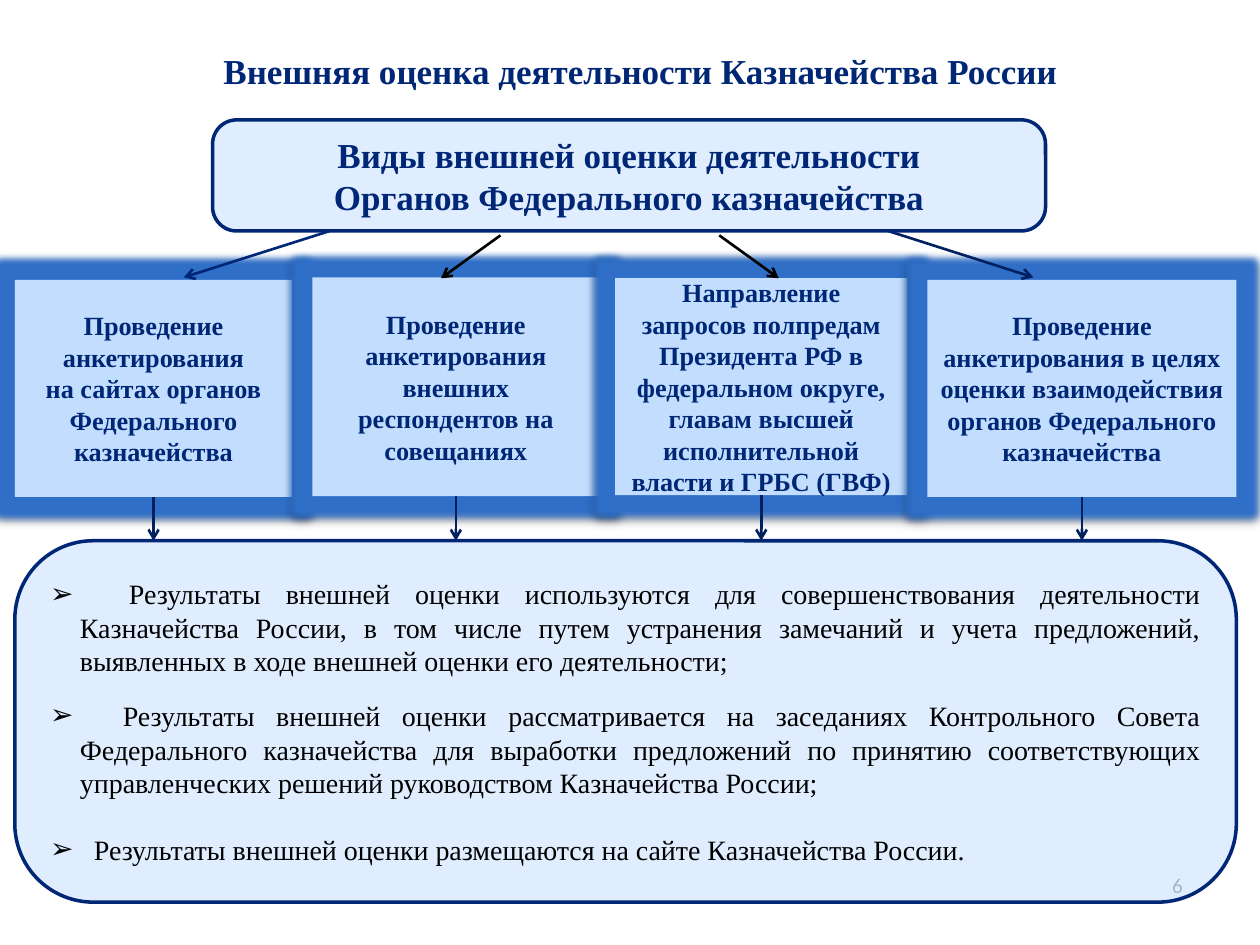
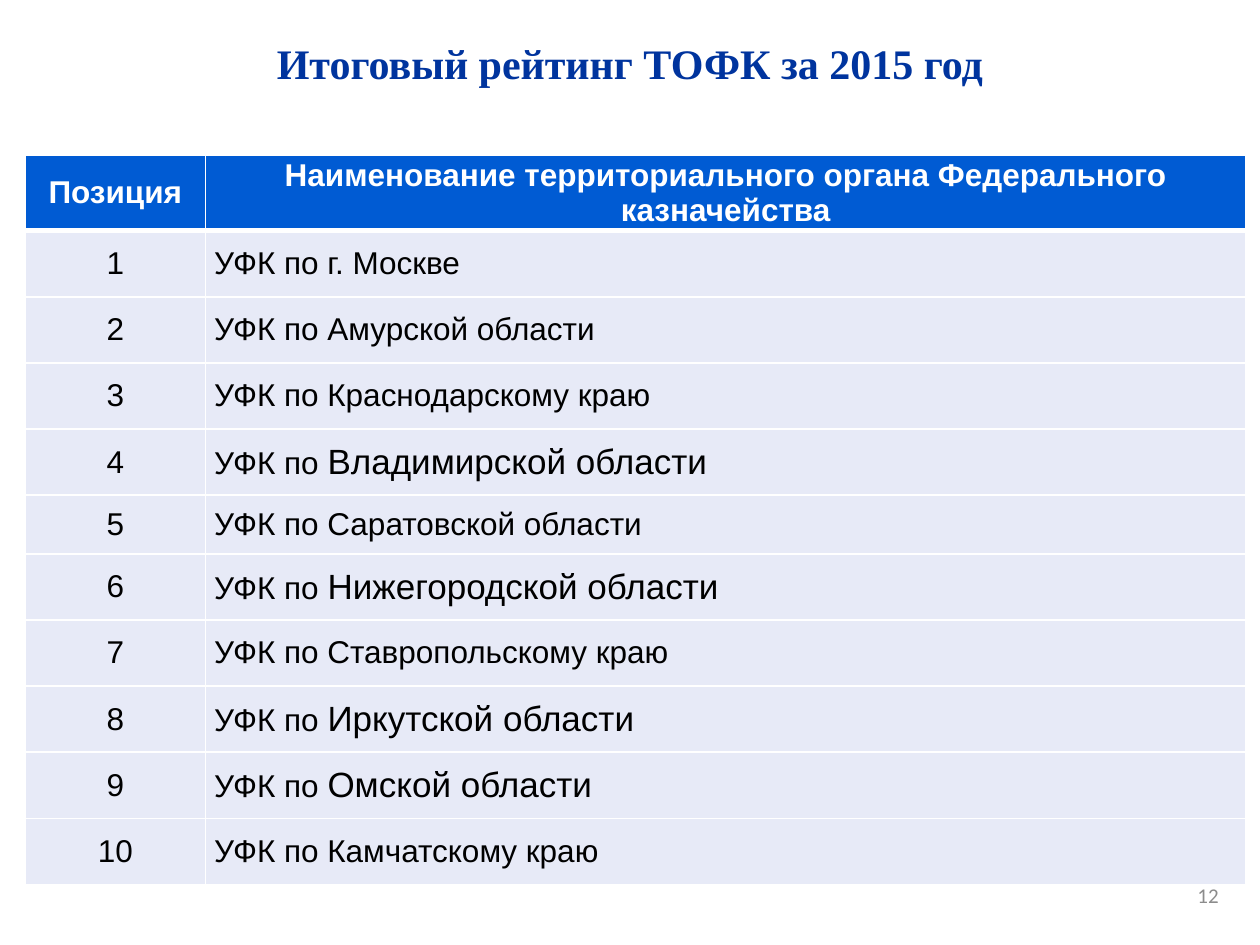
from lxml import etree
from pptx import Presentation
from pptx.dml.color import RGBColor
from pptx.enum.shapes import MSO_CONNECTOR, MSO_SHAPE
from pptx.enum.text import MSO_ANCHOR, PP_ALIGN
from pptx.oxml.ns import qn
from pptx.util import Pt

RECT, ROUNDED = MSO_SHAPE.RECTANGLE, MSO_SHAPE.ROUNDED_RECTANGLE
STRAIGHT = MSO_CONNECTOR.STRAIGHT
MIDDLE, TOP = MSO_ANCHOR.MIDDLE, MSO_ANCHOR.TOP
LEFT, CENTER = PP_ALIGN.LEFT, PP_ALIGN.CENTER
RIGHT, JUSTIFY = PP_ALIGN.RIGHT, PP_ALIGN.JUSTIFY
BOTTOM_SIDE = 2

SERIF, SANS, NUMBER_FONT = "Times New Roman", "Arial", "Calibri"
NAVY, DARK_NAVY, TITLE_BLUE = "002776", "002060", "00349E"
PALE_BLUE, GLOW_BLUE = "C3DDFF", "2F6FC8"
HEADER_BLUE, ROW_FILL = "005BD3", "E7EAF7"
BLACK, WHITE, GREY = "000000", "FFFFFF", "8C8C8C"

# left, top, width, height, lines of text
CARDS = [
    (8.5, 160, 158.5, 124,
     ["Проведение анкетирования",
      "на сайтах органов Федерального казначейства"]),
    (178.5, 158.5, 164, 125,
     ["Проведение анкетирования внешних респондентов на совещаниях"]),
    (351.5, 159, 167, 124,
     ["Направление запросов полпредам Президента РФ в федеральном округе,",
      "главам высшей исполнительной власти и ГРБС (ГВФ)"]),
    (530, 160, 176.5, 124,
     ["Проведение анкетирования в целях оценки взаимодействия органов "
      "Федерального казначейства"]),
]
# start x, start y, end x, end y, colour
BRANCHES = [
    (188.5, 132, 105, 158.5, NAVY),
    (286, 134.5, 252, 159, BLACK),
    (411, 134.5, 445, 159, BLACK),
    (507.5, 132, 590.5, 158.5, DARK_NAVY),
]
# space before, offset of the first word, text
RESULTS = [
    (0, 28, "Результаты внешней оценки используются для совершенствования "
     "деятельности Казначейства России, в том числе путем устранения замечаний "
     "и учета предложений, выявленных в ходе внешней оценки его деятельности;"),
    (12, 24.5, "Результаты внешней оценки рассматривается на заседаниях "
     "Контрольного Совета Федерального казначейства для выработки предложений "
     "по принятию соответствующих управленческих решений руководством "
     "Казначейства России;"),
    (19, 8, "Результаты внешней оценки размещаются на сайте Казначейства России."),
]
BULLET_INDENT = 17
PANEL_BOX = (8.5, 309, 698, 206.5)

REGIONS = ["г. Москве", "Амурской области", "Краснодарскому краю",
           "Владимирской области", "Саратовской области",
           "Нижегородской области", "Ставропольскому краю",
           "Иркутской области", "Омской области", "Камчатскому краю"]
LARGE_POSITIONS = {4, 6, 8, 9}
SHORT_POSITION = 5


def rgb(value):
    return RGBColor.from_string(value)


def points(*values):
    return [Pt(value) for value in values]


def add_colour(parent, value, alpha=None):
    colour = etree.SubElement(parent, qn("a:srgbClr"), val=value)
    if alpha is not None:
        etree.SubElement(colour, qn("a:alpha"), val=str(alpha * 1000))


def add_run(paragraph, text, size, colour, font=SERIF, bold=False):
    run = paragraph.add_run()
    run.text = text
    run.font.size, run.font.name, run.font.bold = Pt(size), font, bold
    run.font.color.rgb = rgb(colour)


def add_label(slide, box, text, size, colour, font=SERIF, bold=False,
              align=CENTER, anchor=TOP):
    frame = slide.shapes.add_textbox(*points(*box)).text_frame
    frame.word_wrap = True
    frame.vertical_anchor = anchor
    frame.paragraphs[0].alignment = align
    add_run(frame.paragraphs[0], text, size, colour, font, bold)


def add_title(slide, box, text, size, colour):
    add_label(slide, box, text, size, colour, bold=True)


def add_page_number(slide, left, top, number):
    add_label(slide, (left, top, 168, 29), number, 12, GREY, NUMBER_FONT,
              align=RIGHT, anchor=MIDDLE)


def add_block(slide, kind, box):
    block = slide.shapes.add_shape(kind, *points(*box))
    block.shadow.inherit = False
    block.fill.solid()
    block.fill.fore_color.rgb = rgb(PALE_BLUE)
    block.text_frame.word_wrap = True
    block.text_frame.vertical_anchor = MIDDLE
    return block


def add_card(slide, box, lines):
    card = add_block(slide, RECT, box)
    card.line.fill.background()
    effects = card._element.spPr.find(qn("a:effectLst"))
    glow = etree.SubElement(effects, qn("a:glow"), rad=str(Pt(8)))
    add_colour(glow, GLOW_BLUE)
    shadow = etree.SubElement(effects, qn("a:outerShdw"), blurRad=str(Pt(3.5)),
                              dist=str(Pt(2.2)), dir="5400000", rotWithShape="0")
    add_colour(shadow, BLACK, 32)
    paragraph = card.text_frame.paragraphs[0]
    paragraph.alignment = CENTER
    for index, line in enumerate(lines):
        if index:
            paragraph.add_line_break()
        add_run(paragraph, line, 15, NAVY, bold=True)
    return card


def add_rounded_panel(slide, box):
    panel = add_block(slide, ROUNDED, box)
    panel.adjustments[0] = 0.217
    panel.line.color.rgb = rgb(NAVY)
    panel.line.width = Pt(2)
    colour = panel._element.spPr.find(qn("a:solidFill")).find(qn("a:srgbClr"))
    etree.SubElement(colour, qn("a:alpha"), val="50000")
    return panel.text_frame


def add_arrow(slide, start_x, start_y, end_x, end_y, colour):
    arrow = slide.shapes.add_connector(
        STRAIGHT, *points(start_x, start_y, end_x, end_y))
    arrow.line.color.rgb = rgb(colour)
    arrow.line.width = Pt(1.5)
    etree.SubElement(arrow.line._get_or_add_ln(), qn("a:tailEnd"), type="arrow")
    etree.SubElement(arrow._element.spPr, qn("a:effectLst"))
    return arrow


def add_heading_panel(slide, box):
    frame = add_rounded_panel(slide, box)
    for index, line in enumerate(["Виды внешней оценки деятельности",
                                  "Органов Федерального казначейства"]):
        paragraph = frame.add_paragraph() if index else frame.paragraphs[0]
        paragraph.alignment = CENTER
        add_run(paragraph, line, 20, NAVY, bold=True)


def add_results_panel(slide, box):
    frame = add_rounded_panel(slide, box)
    for index, (gap, offset, text) in enumerate(RESULTS):
        paragraph = frame.add_paragraph() if index else frame.paragraphs[0]
        paragraph.alignment = JUSTIFY
        if gap:
            paragraph.space_before = Pt(gap)
        properties = paragraph._p.get_or_add_pPr()
        properties.set("marL", str(Pt(BULLET_INDENT)))
        properties.set("indent", str(Pt(-BULLET_INDENT)))
        etree.SubElement(properties, qn("a:buFont"), typeface=SANS)
        etree.SubElement(properties, qn("a:buChar"), char="➢")
        tabs = etree.SubElement(properties, qn("a:tabLst"))
        etree.SubElement(tabs, qn("a:tab"), algn="l",
                         pos=str(Pt(BULLET_INDENT + offset)))
        add_run(paragraph, "\t" + text, 16, BLACK)


def build_assessment_slide(slide):
    cards = [add_card(slide, box, lines) for *box, lines in CARDS]
    for branch in BRANCHES:
        add_arrow(slide, *branch)
    add_title(slide, (89, 25, 554, 32),
              "Внешняя оценка деятельности Казначейства России", 20, NAVY)
    add_page_number(slide, 515, 491, "6")
    add_heading_panel(slide, (121.5, 68.5, 476, 63.5))
    add_results_panel(slide, PANEL_BOX)
    for card, (left, top, width, height, _) in zip(cards, CARDS):
        middle = left + width / 2
        arrow = add_arrow(slide, middle, top + height, middle, PANEL_BOX[1],
                          DARK_NAVY)
        arrow.begin_connect(card, BOTTOM_SIDE)


def style_cell(cell, fill, align, bottom_width):
    cell.margin_left = cell.margin_right = Pt(5)
    cell.margin_top = cell.margin_bottom = 0
    cell.vertical_anchor = MIDDLE
    properties = cell._tc.get_or_add_tcPr()
    for side, width in (("L", 1), ("R", 1), ("T", 1), ("B", bottom_width)):
        border = etree.SubElement(properties, qn("a:ln" + side), w=str(Pt(width)))
        add_colour(etree.SubElement(border, qn("a:solidFill")), WHITE)
    cell.fill.solid()
    cell.fill.fore_color.rgb = rgb(fill)
    paragraph = cell.text_frame.paragraphs[0]
    paragraph.alignment = align
    return paragraph


def add_rating_table(slide, left, top, width):
    position_width = 103
    heights = [42] + [33.5 if position == SHORT_POSITION else 37.8
                      for position in range(1, len(REGIONS) + 1)]
    table = slide.shapes.add_table(
        len(heights), 2, *points(left, top, width, sum(heights))).table
    table.horz_banding = False
    table.columns[0].width = Pt(position_width)
    table.columns[1].width = Pt(width - position_width)
    for row, height in zip(table.rows, heights):
        row.height = Pt(height)
    headers = ["Позиция",
               "Наименование территориального органа Федерального казначейства"]
    for column, header in enumerate(headers):
        paragraph = style_cell(table.cell(0, column), HEADER_BLUE, CENTER, 3)
        add_run(paragraph, header, 18, WHITE, SANS, bold=True)
    for position, region in enumerate(REGIONS, 1):
        number = style_cell(table.cell(position, 0), ROW_FILL, CENTER, 1)
        add_run(number, str(position), 18, BLACK, SANS)
        name = style_cell(table.cell(position, 1), ROW_FILL, LEFT, 1)
        add_run(name, "УФК по ", 18, BLACK, SANS)
        region_size = 20 if position in LARGE_POSITIONS else 18
        add_run(name, region, region_size, BLACK, SANS)


def build_rating_slide(slide):
    add_page_number(slide, 535.5, 497, "12")
    add_rating_table(slide, 14.4, 88.6, 697.6)
    add_title(slide, (0, 18, 720, 36), "Итоговый рейтинг ТОФК за 2015 год",
              24, TITLE_BLUE)


def main():
    deck = Presentation()
    deck.slide_width, deck.slide_height = points(720, 540)
    blank = deck.slide_layouts[6]
    for build in (build_assessment_slide, build_rating_slide):
        build(deck.slides.add_slide(blank))
    deck.save("out.pptx")


if __name__ == "__main__":
    main()
